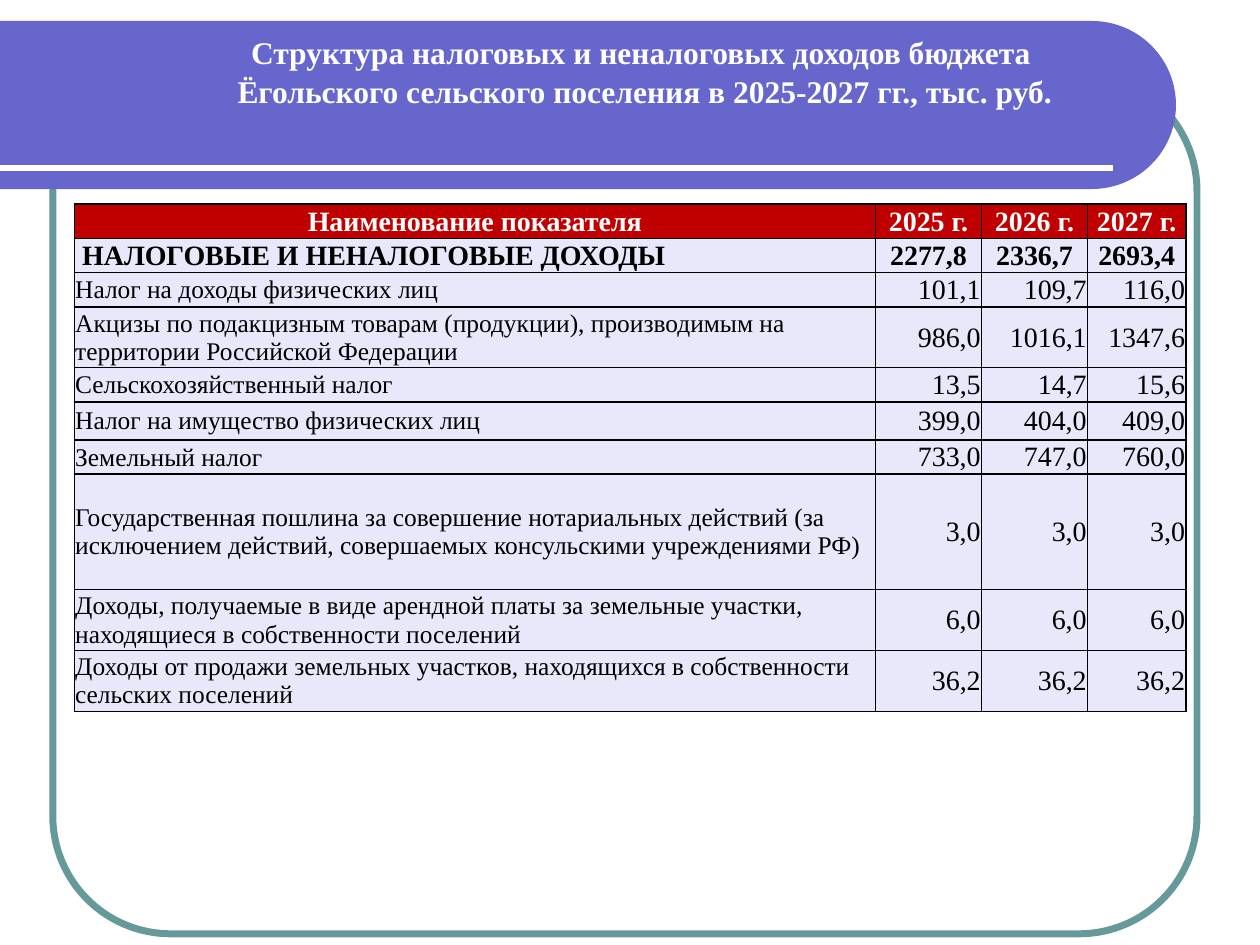
from dataclasses import dataclass
from math import cos, pi, sin

from lxml import etree
from pptx import Presentation
from pptx.dml.color import RGBColor
from pptx.enum.shapes import MSO_CONNECTOR, MSO_SHAPE
from pptx.enum.text import MSO_ANCHOR, MSO_AUTO_SIZE, PP_ALIGN
from pptx.oxml.ns import qn
from pptx.util import Pt

LEFT, CENTER, RIGHT = PP_ALIGN.LEFT, PP_ALIGN.CENTER, PP_ALIGN.RIGHT
TOP, MIDDLE = MSO_ANCHOR.TOP, MSO_ANCHOR.MIDDLE
TITLE_ONLY = 5


@dataclass(frozen=True)
class Theme:
    font: str = "Times New Roman"
    banner: str = "6666CC"
    frame: str = "669999"
    header: str = "C00000"
    body: str = "E8E8FA"
    light: str = "FFFFFF"
    dark: str = "000000"
    title_size: float = 18
    value_size: float = 16
    label_size: float = 14.5


THEME = Theme()

TITLE = [
    "Структура налоговых и неналоговых доходов бюджета ",
    "Ёгольского сельского поселения в 2025-2027 гг., тыс. руб.",
]
COLUMN_WIDTHS = [457.8, 60.6, 60.6, 56.2]
# Row height in points, then the cells
REVENUE_ROWS = [
    (19.6, "Наименование показателя", "2025 г.", "2026 г.", "2027 г."),
    (19.6, " НАЛОГОВЫЕ И НЕНАЛОГОВЫЕ ДОХОДЫ", "2277,8", "2336,7", "2693,4"),
    (19.6, "Налог на доходы физических лиц", "101,1", "109,7", "116,0"),
    (34.8, "Акцизы по подакцизным товарам (продукции), производимым на "
           "территории Российской Федерации", "986,0", "1016,1", "1347,6"),
    (19.6, "Сельскохозяйственный налог", "13,5", "14,7", "15,6"),
    (21.6, "Налог на имущество физических лиц", "399,0", "404,0", "409,0"),
    (19.6, "Земельный налог", "733,0", "747,0", "760,0"),
    (66, "Государственная пошлина за совершение нотариальных действий (за "
         "исключением действий, совершаемых консульскими учреждениями РФ)",
     "3,0", "3,0", "3,0"),
    (34.8, "Доходы, получаемые в виде арендной платы за земельные участки, "
           "находящиеся в собственности поселений", "6,0", "6,0", "6,0"),
    (34.8, "Доходы от продажи земельных участков, находящихся в собственности "
           "сельских поселений", "36,2", "36,2", "36,2"),
]


def rgb(color):
    return RGBColor.from_string(color)


def write_text(text_frame, lines, *, size, color, bold=False, align=LEFT,
               anchor=MIDDLE, space_after=0):
    text_frame.word_wrap = True
    text_frame.vertical_anchor = anchor
    for index, line in enumerate(lines):
        paragraph = text_frame.paragraphs[0] if index == 0 else text_frame.add_paragraph()
        paragraph.alignment = align
        paragraph.space_after = Pt(space_after)
        run = paragraph.add_run()
        run.text = line
        run.font.name = THEME.font
        run.font.size = Pt(size)
        run.font.bold = bold
        run.font.color.rgb = rgb(color)


def add_frame(slide):
    frame = slide.shapes.add_shape(
        MSO_SHAPE.ROUNDED_RECTANGLE, Pt(30.2), Pt(41.8), Pt(653.8), Pt(491.8))
    frame.adjustments[0] = 0.137
    frame.shadow.inherit = False
    frame.fill.background()
    frame.line.color.rgb = rgb(THEME.frame)
    frame.line.width = Pt(4)


def add_banner(slide, top, right, height, steps=48):
    """Band from the left edge of the slide with a semicircular right end."""
    radius = height / 2
    angles = [pi * step / steps - pi / 2 for step in range(steps + 1)]
    arc = [(Pt(right - radius + radius * cos(angle)),
            Pt(top + radius + radius * sin(angle))) for angle in angles]
    builder = slide.shapes.build_freeform(0, Pt(top))
    builder.add_line_segments(arc + [(0, Pt(top + height))], close=True)
    banner = builder.convert_to_shape()
    banner.shadow.inherit = False
    banner.fill.solid()
    banner.fill.fore_color.rgb = rgb(THEME.banner)
    banner.line.fill.background()


def add_rule(slide, y, right):
    rule = slide.shapes.add_connector(MSO_CONNECTOR.STRAIGHT, 0, Pt(y), Pt(right), Pt(y))
    rule.line.color.rgb = rgb(THEME.light)
    rule.line.width = Pt(3)
    etree.SubElement(rule._element.spPr, qn("a:effectLst"))


def place_title(slide):
    title = slide.shapes.title
    title.left, title.top, title.width, title.height = Pt(87.8), Pt(15.1), Pt(561.6), Pt(50.4)
    title.text_frame.auto_size = MSO_AUTO_SIZE.NONE
    write_text(title.text_frame, TITLE, size=THEME.title_size, color=THEME.light,
               bold=True, align=CENTER, anchor=TOP, space_after=1)
    # Bring the title in front of the banner
    slide.shapes._spTree.append(title._element)


def set_borders(cell, color, width):
    properties = cell._tc.get_or_add_tcPr()
    for index, side in enumerate(("lnL", "lnR", "lnT", "lnB")):
        line = etree.Element(qn(f"a:{side}"), w=str(Pt(width)))
        fill = etree.SubElement(line, qn("a:solidFill"))
        etree.SubElement(fill, qn("a:srgbClr"), val=color)
        properties.insert(index, line)


def format_cell(cell, text, row, column):
    is_header, is_strong, is_label = row == 0, row < 2, column == 0
    if is_header or (is_strong and not is_label):
        align = CENTER
    else:
        align = LEFT if is_label else RIGHT
    size = THEME.label_size if is_label and not is_strong else THEME.value_size
    cell.margin_left = cell.margin_right = cell.margin_top = Pt(0.5)
    cell.margin_bottom = 0
    cell.vertical_anchor = MIDDLE
    cell.fill.solid()
    cell.fill.fore_color.rgb = rgb(THEME.header if is_header else THEME.body)
    write_text(cell.text_frame, [text], size=size, bold=is_strong, align=align,
               color=THEME.light if is_header else THEME.dark)
    set_borders(cell, THEME.dark, 1)


def add_revenue_table(slide, left, top):
    height = sum(row[0] for row in REVENUE_ROWS)
    table = slide.shapes.add_table(
        len(REVENUE_ROWS), len(COLUMN_WIDTHS), Pt(left), Pt(top),
        Pt(sum(COLUMN_WIDTHS)), Pt(height)).table
    for column, width in zip(table.columns, COLUMN_WIDTHS):
        column.width = Pt(width)
    for row, (row_height, *texts) in enumerate(REVENUE_ROWS):
        table.rows[row].height = Pt(row_height)
        for column, text in enumerate(texts):
            format_cell(table.cell(row, column), text, row, column)


def main():
    presentation = Presentation()
    presentation.slide_width, presentation.slide_height = Pt(720), Pt(540)
    slide = presentation.slides.add_slide(presentation.slide_layouts[TITLE_ONLY])
    add_frame(slide)
    add_banner(slide, top=12, right=672, height=96)
    add_rule(slide, y=96, right=636)
    place_title(slide)
    add_revenue_table(slide, left=42.5, top=116.6)
    presentation.save("out.pptx")


if __name__ == "__main__":
    main()
